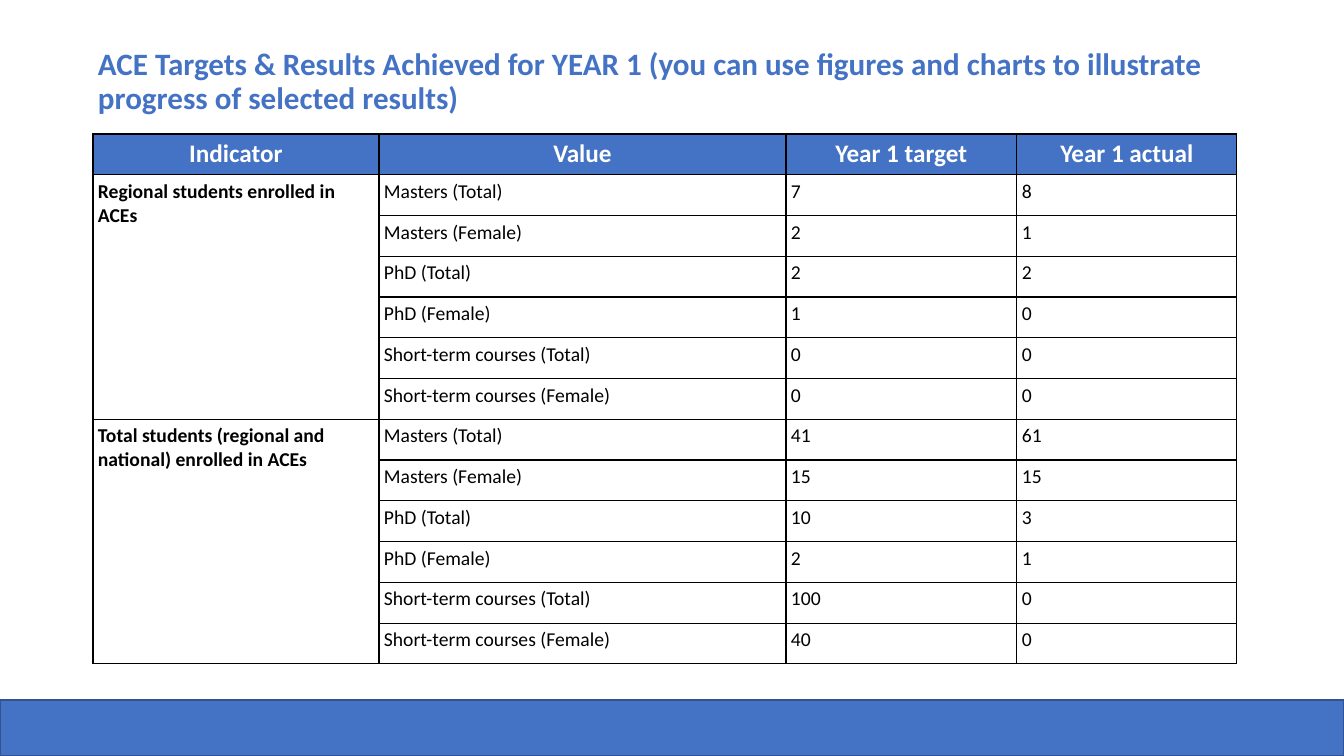
from dataclasses import dataclass

from lxml import etree
from pptx import Presentation
from pptx.dml.color import RGBColor
from pptx.enum.shapes import MSO_SHAPE
from pptx.enum.text import MSO_ANCHOR, MSO_AUTO_SIZE, PP_ALIGN
from pptx.oxml.ns import qn
from pptx.util import Pt

RECT = MSO_SHAPE.RECTANGLE
MIDDLE, TOP = MSO_ANCHOR.MIDDLE, MSO_ANCHOR.TOP
LEFT, CENTER = PP_ALIGN.LEFT, PP_ALIGN.CENTER
NO_FIT = MSO_AUTO_SIZE.NONE
SCALE = 914400 / 100.8
TITLE_ONLY = 5


@dataclass(frozen=True)
class Theme:
    font: str = "Calibri"
    blue: str = "4472C4"
    edge: str = "32538F"
    ink: str = "000000"
    paper: str = "FFFFFF"
    title: float = 22.2
    head: int = 18
    body: int = 14
    rule: int = 1
    inset: int = 5


THEME = Theme()
TITLE = ("ACE Targets & Results Achieved for YEAR 1 (you can use figures "
         "and charts to illustrate progress of selected results)")
HEADS = ["Indicator", "Value", "Year 1 target", "Year 1 actual"]
WIDTHS = [286, 407, 231, 220]
VALUES = [f"{level} ({group})"
          for level in ("Masters", "PhD", "Short-term courses")
          for group in ("Total", "Female")]
RESULTS = {
    "Regional students enrolled in ACEs":
        [(7, 8), (2, 1), (2, 2), (1, 0), (0, 0), (0, 0)],
    "Total students (regional and national) enrolled in ACEs":
        [(41, 61), (15, 15), (10, 3), (2, 1), (100, 0), (40, 0)],
}


def px(n):
    return round(n * SCALE)


def apply(target, **values):
    for name, value in values.items():
        setattr(target, name, value)


def paint(fill, color):
    fill.solid()
    fill.fore_color.rgb = RGBColor.from_string(color)


def margins():
    return {f"margin_{side}": px(THEME.inset)
            for side in ("left", "top", "right", "bottom")}


def write(frame, text, size, color, bold, align, spacing=1.0):
    para = frame.paragraphs[0]
    apply(para, alignment=align, line_spacing=spacing)
    run = para.add_run()
    run.text = text
    apply(run.font, name=THEME.font, size=Pt(size), bold=bold)
    run.font.color.rgb = RGBColor.from_string(color)


def outline(cell):
    """Give all four sides of a table cell a thin rule."""
    props = cell._tc.get_or_add_tcPr()
    for side in ("a:lnL", "a:lnR", "a:lnT", "a:lnB"):
        line = etree.SubElement(props, qn(side), w=str(Pt(THEME.rule)))
        fill = etree.SubElement(line, qn("a:solidFill"))
        etree.SubElement(fill, qn("a:srgbClr"), val=THEME.ink)


def add_title(slide, x, y, w, h):
    title = slide.shapes.title
    apply(title, left=px(x), top=px(y), width=px(w), height=px(h))
    frame = title.text_frame
    apply(frame, word_wrap=True, auto_size=NO_FIT,
          vertical_anchor=MIDDLE, **margins())
    write(frame, TITLE, THEME.title, THEME.blue, True, LEFT, 0.9)


def add_band(slide, x, y, w, h):
    band = slide.shapes.add_shape(RECT, px(x), px(y), px(w), px(h))
    band.shadow.inherit = False
    paint(band.fill, THEME.blue)
    paint(band.line.fill, THEME.edge)
    band.line.width = Pt(THEME.rule)


def add_results(slide, x, y, w, h):
    rows = [HEADS]
    for label, pairs in RESULTS.items():
        for i, (value, pair) in enumerate(zip(VALUES, pairs)):
            rows.append(["" if i else label, value, *map(str, pair)])
    table = slide.shapes.add_table(
        len(rows), len(HEADS), px(x), px(y), px(w), px(h)).table
    apply(table, first_row=False, horz_banding=False)
    for col, width in zip(table.columns, WIDTHS):
        col.width = px(width)
    for r, texts in enumerate(rows):
        table.rows[r].height = px(h / len(rows))
        for c, text in enumerate(texts):
            cell = table.cell(r, c)
            apply(cell, vertical_anchor=TOP, **margins())
            outline(cell)
            paint(cell.fill, THEME.paper if r else THEME.blue)
            if not text:
                continue
            if r:
                style = THEME.body, THEME.ink, c == 0, LEFT
            else:
                style = THEME.head, THEME.paper, True, CENTER
            write(cell.text_frame, text, *style)
    step = len(VALUES)
    for start in range(1, len(rows), step):
        table.cell(start, 0).merge(table.cell(start + step - 1, 0))


def main():
    deck = Presentation()
    apply(deck, slide_width=px(1344), slide_height=px(756))
    slide = deck.slides.add_slide(deck.slide_layouts[TITLE_ONLY])
    add_band(slide, 0, 700, 1344, 56)
    add_title(slide, 93, 40, 1159, 85)
    add_results(slide, 93, 134, sum(WIDTHS), 530)
    deck.save("out.pptx")


if __name__ == "__main__":
    main()
